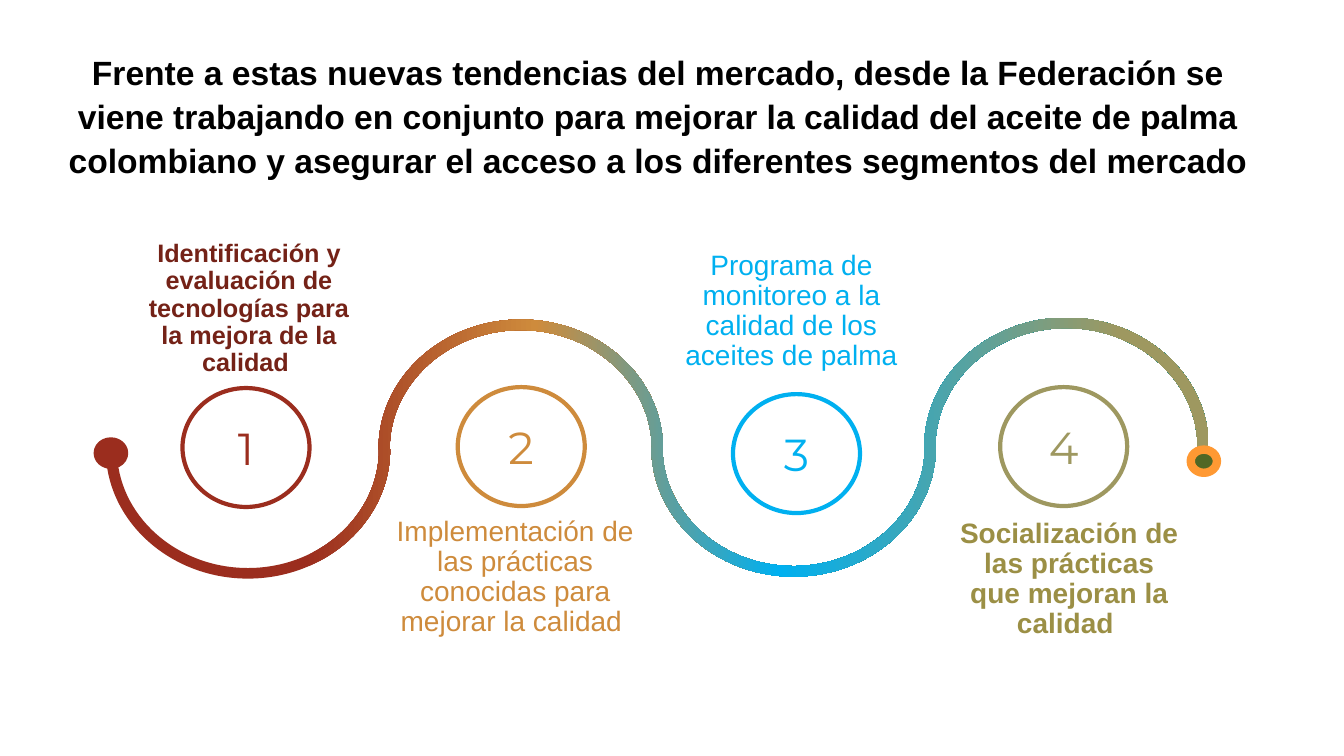
from dataclasses import dataclass

import pptx
import pptx.dml.color
import pptx.enum.shapes
import pptx.enum.text
import pptx.oxml.ns
import pptx.util
from lxml import etree


@dataclass(frozen=True)
class Theme:
    black: str = "000000"
    white: str = "FFFFFF"
    red: str = "9B2D1E"
    dark_red: str = "742217"
    orange: str = "CE8B3C"
    blue: str = "00B0F0"
    olive: str = "9E9860"
    dark_olive: str = "9B8F45"
    green: str = "506725"
    amber: str = "FF9933"
    font: str = "Arial"
    number_font: str = "Montserrat"
    title_size: int = 24
    number_size: int = 32
    label_size: int = 20
    small_label_size: int = 18
    ring_line: int = 3
    dot_line: int = 6


@dataclass(frozen=True)
class Box:
    """Left, top, width and height as percentages of the slide."""
    x: float
    y: float
    w: float
    h: float


@dataclass(frozen=True)
class Step:
    color: str
    ring_x: float
    ring_y: float
    label: str
    label_box: Box
    label_color: str
    label_size: int
    bold: bool


@dataclass(frozen=True)
class Dot:
    x: float
    y: float
    fill: str
    line: str


T = Theme()
WIDTH, HEIGHT = pptx.util.Inches(13.33), pptx.util.Inches(7.5)
RING_W, RING_H = 9.45, 15.73
DOT_W, DOT_H = 1.95, 3.07

TITLE = ("Frente a estas nuevas tendencias del mercado, desde la Federación se viene "
         "trabajando en conjunto para mejorar la calidad del aceite de palma colombiano "
         "y asegurar el acceso a los diferentes segmentos del mercado")
TITLE_BOX = Box(3.75, 4, 90.4, 22.13)

STEPS = [
    Step(T.red, 13.58, 51.33,
         "Identificación y evaluación de tecnologías para la mejora de la calidad ",
         Box(9.38, 31.2, 18.3, 20), T.dark_red, T.small_label_size, True),
    Step(T.orange, 34.06, 51.2,
         "Implementación de las prácticas conocidas para mejorar la calidad ",
         Box(28.51, 67.73, 19.65, 17.73), T.orange, T.label_size, False),
    Step(T.blue, 54.54, 52.13,
         "Programa de monitoreo a la calidad de los aceites de palma",
         Box(49.74, 32.53, 18.3, 18.8), T.blue, T.label_size, False),
    Step(T.olive, 74.42, 51.2,
         "Socialización de las prácticas que mejoran la calidad ",
         Box(70.44, 68, 18.23, 18.4), T.dark_olive, T.label_size, True),
]
DOTS = [Dot(7.28, 58.4, T.red, T.red), Dot(88.6, 59.47, T.green, T.amber)]
WAVE_STOPS = [(18, T.red), (39, T.orange), (61, T.blue), (92, T.olive)]

# Half ellipses of the wave, in percentages of the slide
WAVE_X, WAVE_Y = 18.45, 59.47
WAVE_PITCH, WAVE_RISE = 20.3, 0.13
OUTER_RX, OUTER_RY = 10.58, 17.07
INNER_RX, INNER_RY = 9.75, 15.67
# Unit half circle as a start point and two Bézier curves
KAPPA = 0.55
HALF_CIRCLE = [(-1, 0), (-1, KAPPA), (-KAPPA, 1), (0, 1), (KAPPA, 1), (1, KAPPA), (1, 0)]


def rgb(color: str) -> pptx.dml.color.RGBColor:
    return pptx.dml.color.RGBColor.from_string(color)


def col(share: float) -> int:
    return round(WIDTH * share / 100)


def row(share: float) -> int:
    return round(HEIGHT * share / 100)


def place(box: Box) -> tuple[int, int, int, int]:
    return col(box.x), row(box.y), col(box.w), row(box.h)


def write(sp, text: str, size: int, color: str, font: str = T.font,
          bold: bool = False, spacing: float = 1.0) -> None:
    tf = sp.text_frame
    tf.word_wrap = True
    p = tf.paragraphs[0]
    p.text = text
    p.alignment = pptx.enum.text.PP_ALIGN.CENTER
    p.line_spacing = spacing
    p.font.name = font
    p.font.size = pptx.util.Pt(size)
    p.font.bold = bold
    p.font.color.rgb = rgb(color)


def add_ellipse(s, box: Box, fill: str, line: str, width: int):
    sp = s.shapes.add_shape(pptx.enum.shapes.MSO_SHAPE.OVAL, *place(box))
    sp.shadow.inherit = False
    sp.fill.solid()
    sp.fill.fore_color.rgb = rgb(fill)
    sp.line.color.rgb = rgb(line)
    sp.line.width = pptx.util.Pt(width)
    return sp


def wave_edge(upper: bool) -> list[tuple[int, int]]:
    """One edge of the ribbon, left to right, over alternating dips and humps."""
    points = []
    for i in range(len(STEPS)):
        hump = i % 2 == 1
        rx, ry = (OUTER_RX, OUTER_RY) if hump == upper else (INNER_RX, INNER_RY)
        direction = -1 if hump else 1
        cx, cy = WAVE_X + i * WAVE_PITCH, WAVE_Y - i * WAVE_RISE
        points += [(col(cx + rx * x), row(cy + direction * ry * y)) for x, y in HALF_CIRCLE]
    return points


def bend(sp) -> None:
    """Turn the segments after each half circle's start point into Bézier curves."""
    qn = pptx.oxml.ns.qn
    outline = sp._element.spPr.find(".//" + qn("a:path"))
    nodes = list(outline)[:-1]
    for start in range(0, len(nodes), len(HALF_CIRCLE)):
        for first in (start + 1, start + 4):
            curve = etree.Element(qn("a:cubicBezTo"))
            nodes[first].addprevious(curve)
            for node in nodes[first:first + 3]:
                curve.append(node[0])
                outline.remove(node)


def add_wave(s) -> None:
    start, *rest = wave_edge(True) + wave_edge(False)[::-1]
    builder = s.shapes.build_freeform(*start)
    builder.add_line_segments(rest, close=True)
    sp = builder.convert_to_shape()
    bend(sp)
    sp.shadow.inherit = False
    sp.line.fill.background()
    sp.fill.gradient()
    sp.fill.gradient_angle = 0
    qn = pptx.oxml.ns.qn
    stops = sp._element.spPr.find(".//" + qn("a:gsLst"))
    for stop in list(stops):
        stops.remove(stop)
    for share, color in WAVE_STOPS:
        stop = etree.SubElement(stops, qn("a:gs"), pos=str(share * 1000))
        etree.SubElement(stop, qn("a:srgbClr"), val=color)


def add_title(s) -> None:
    sp = s.shapes.title
    sp.left, sp.top, sp.width, sp.height = place(TITLE_BOX)
    sp.text_frame.vertical_anchor = pptx.enum.text.MSO_ANCHOR.MIDDLE
    sp.text_frame.auto_size = pptx.enum.text.MSO_AUTO_SIZE.NONE
    write(sp, TITLE, T.title_size, T.black, bold=True, spacing=1.1)


def main() -> None:
    prs = pptx.Presentation()
    prs.slide_width, prs.slide_height = WIDTH, HEIGHT
    s = prs.slides.add_slide(prs.slide_layouts[5])
    add_title(s)
    for number, step in enumerate(STEPS, 1):
        ring = add_ellipse(s, Box(step.ring_x, step.ring_y, RING_W, RING_H),
                           T.white, step.color, T.ring_line)
        write(ring, str(number), T.number_size, step.color, T.number_font)
    add_wave(s)
    for dot in DOTS:
        add_ellipse(s, Box(dot.x, dot.y, DOT_W, DOT_H), dot.fill, dot.line, T.dot_line)
    for step in STEPS:
        label = s.shapes.add_textbox(*place(step.label_box))
        write(label, step.label, step.label_size, step.label_color,
              bold=step.bold, spacing=0.9)
    prs.save("out.pptx")


if __name__ == "__main__":
    main()
